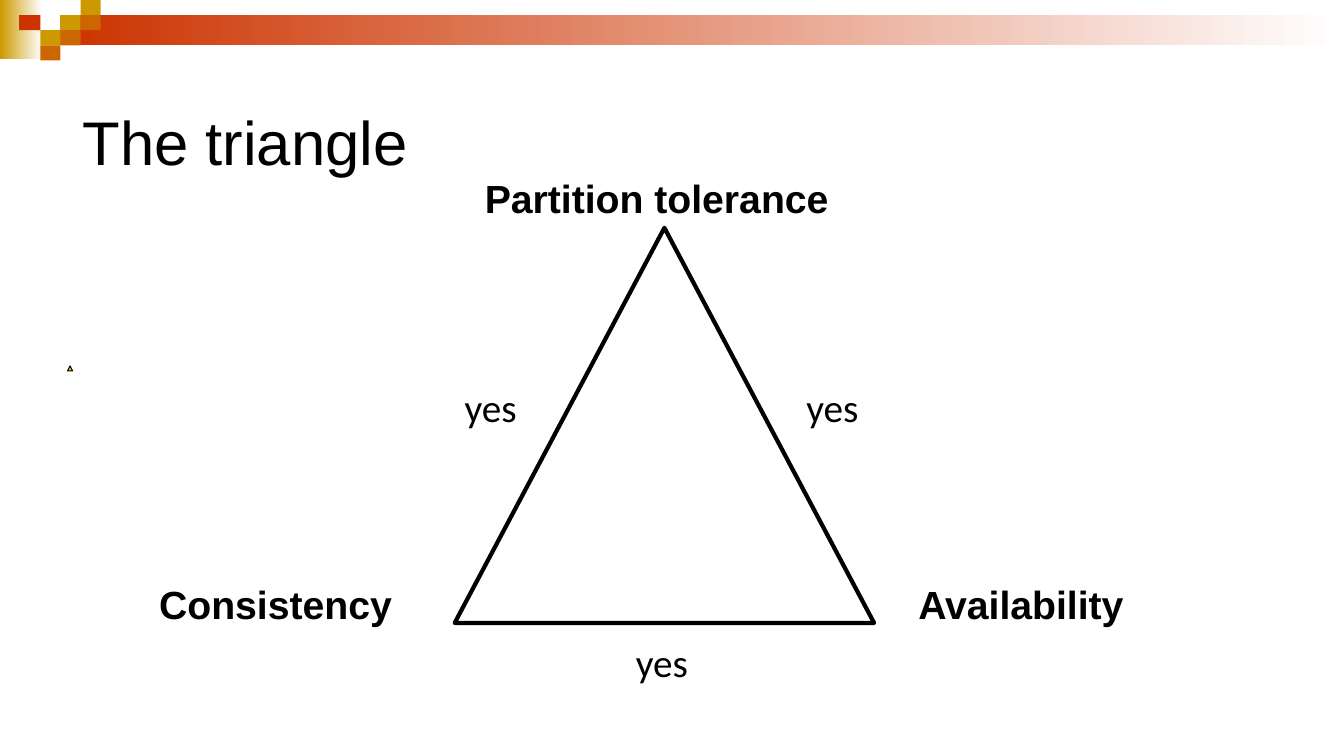
from dataclasses import dataclass
from typing import Optional

import pptx
import pptx.dml.color
import pptx.enum.shapes
import pptx.enum.text
import pptx.util

Shape = pptx.enum.shapes.MSO_SHAPE
Anchor = pptx.enum.text.MSO_ANCHOR
AutoSize = pptx.enum.text.MSO_AUTO_SIZE

COLUMN = 0.2  # inches
ROW = 0.15
LABEL_ROWS = 3.8


@dataclass(frozen=True)
class Theme:
    black: str = "000000"
    white: str = "FFFFFF"
    gold: str = "CC9900"
    red: str = "CC3300"
    orange: str = "CC6600"
    yellow: str = "FFCC00"
    heading_font: str = "Arial"
    answer_font: str = "Calibri"
    title_size: int = 44
    label_size: int = 28


THEME = Theme()


@dataclass(frozen=True)
class Area:
    """A place on the slide, in grid columns and rows."""
    column: float
    row: float
    columns: float = 1
    rows: float = 1

    def lengths(self) -> tuple:
        return (pptx.util.Inches(self.column * COLUMN), pptx.util.Inches(self.row * ROW),
                pptx.util.Inches(self.columns * COLUMN), pptx.util.Inches(self.rows * ROW))


@dataclass(frozen=True)
class Block:
    area: Area
    color: str
    fades: bool = False


@dataclass(frozen=True)
class Triangle:
    area: Area
    line_width: float
    fill: Optional[str] = None


@dataclass(frozen=True)
class Label:
    text: str
    area: Area
    font: str = THEME.heading_font
    size: int = THEME.label_size
    bold: bool = False
    wraps: bool = False
    anchor: Anchor = Anchor.TOP
    auto_size: AutoSize = AutoSize.SHAPE_TO_FIT_TEXT


BANNER = [
    Block(Area(0, 0, 2.1, 3.9), THEME.gold, fades=True),
    Block(Area(3, 1, 63.65, 2), THEME.red, fades=True),
    Block(Area(3, 1), THEME.gold),
    Block(Area(4, 0), THEME.gold),
    Block(Area(4, 1), THEME.orange),
    Block(Area(2, 2), THEME.gold),
    Block(Area(0.95, 1, 1.05), THEME.red),
    Block(Area(3, 2), THEME.orange),
    Block(Area(2, 3), THEME.orange),
]

TRIANGLES = [
    Triangle(Area(3.35, 24.2, 0.25, 0.33), 0.75, THEME.yellow),
    Triangle(Area(22.55, 15.07, 20.8, 26.13), 3),
]

TITLE = Label("The triangle", Area(3.6, 4.33, 60, 10), size=THEME.title_size,
              wraps=True, anchor=Anchor.MIDDLE, auto_size=AutoSize.NONE)

CORNERS = [
    Label("Consistency", Area(7.4, 38.07, 12.7, LABEL_ROWS), bold=True),
    Label("Availability", Area(45.05, 38.07, 12.7, LABEL_ROWS), bold=True, wraps=True),
    Label("Partition tolerance", Area(23.55, 11.2, 18.8, LABEL_ROWS), bold=True),
]

SIDES = [
    Label("yes", Area(column, row, 3.85, LABEL_ROWS), THEME.answer_font)
    for column, row in ((39.5, 25), (31.05, 41.87), (22.55, 25))
]


def rgb(color: str) -> pptx.dml.color.RGBColor:
    return pptx.dml.color.RGBColor.from_string(color)


def draw_block(slide, block: Block) -> None:
    shape = slide.shapes.add_shape(Shape.RECTANGLE, *block.area.lengths())
    shape.shadow.inherit = False
    shape.line.fill.background()
    if block.fades:
        shape.fill.gradient()
        shape.fill.gradient_angle = 0
        for stop, color in zip(shape.fill.gradient_stops, (block.color, THEME.white)):
            stop.color.rgb = rgb(color)
    else:
        shape.fill.solid()
        shape.fill.fore_color.rgb = rgb(block.color)


def draw_triangle(slide, triangle: Triangle) -> None:
    shape = slide.shapes.add_shape(Shape.ISOSCELES_TRIANGLE, *triangle.area.lengths())
    shape.shadow.inherit = False
    shape.line.color.rgb = rgb(THEME.black)
    shape.line.width = pptx.util.Pt(triangle.line_width)
    if triangle.fill:
        shape.fill.solid()
        shape.fill.fore_color.rgb = rgb(triangle.fill)
    else:
        shape.fill.background()


def draw_label(slide, label: Label) -> None:
    frame = slide.shapes.add_textbox(*label.area.lengths()).text_frame
    frame.word_wrap = label.wraps
    frame.auto_size = label.auto_size
    frame.vertical_anchor = label.anchor
    paragraph = frame.paragraphs[0]
    paragraph.text = label.text
    paragraph.font.name = label.font
    paragraph.font.size = pptx.util.Pt(label.size)
    paragraph.font.bold = label.bold
    paragraph.font.color.rgb = rgb(THEME.black)


def main() -> None:
    presentation = pptx.Presentation()
    presentation.slide_width = pptx.util.Inches(13.33)
    presentation.slide_height = pptx.util.Inches(7.5)
    slide = presentation.slides.add_slide(presentation.slide_layouts[6])
    for block in BANNER:
        draw_block(slide, block)
    draw_label(slide, TITLE)
    for triangle in TRIANGLES:
        draw_triangle(slide, triangle)
    for label in CORNERS + SIDES:
        draw_label(slide, label)
    presentation.save("out.pptx")


if __name__ == "__main__":
    main()
